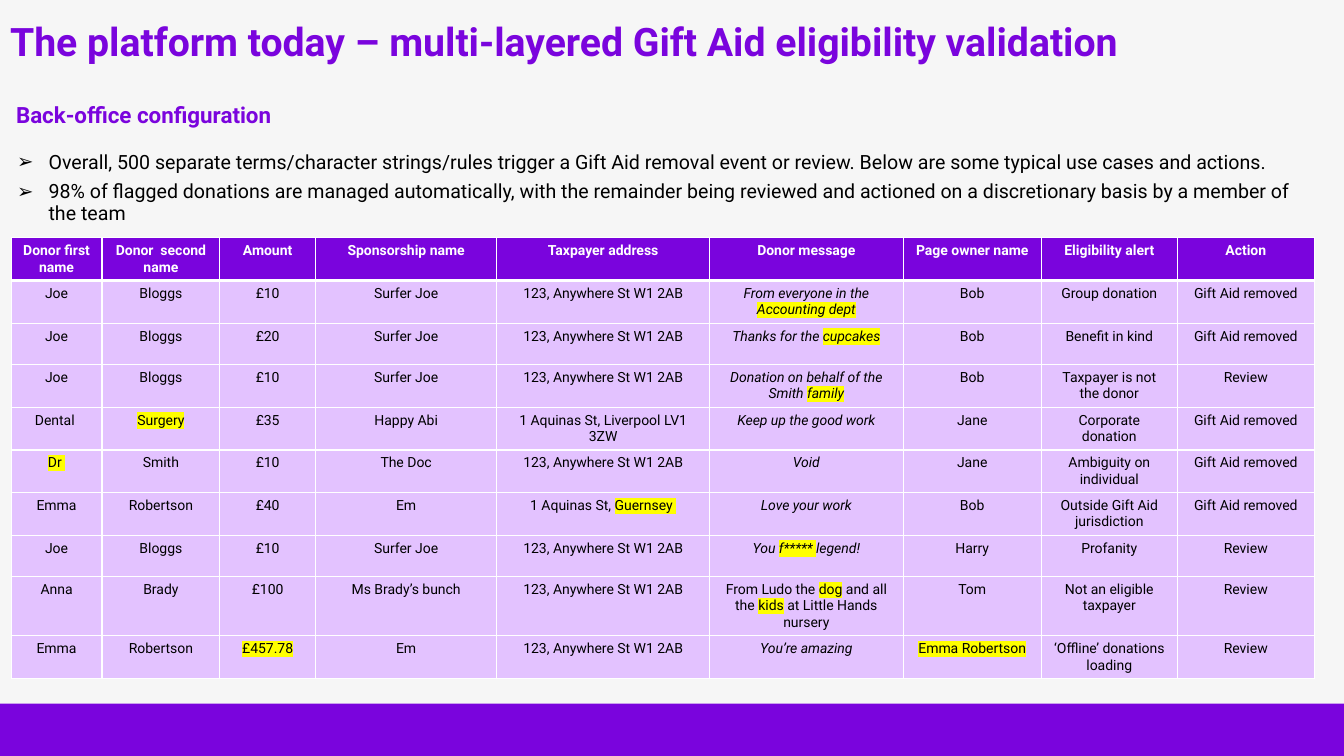
import lxml.etree
import pptx
import pptx.dml.color
import pptx.enum.shapes
import pptx.enum.text
import pptx.oxml.ns
import pptx.util
from pptx.util import Cm, Pt

COLOURS = {
    "purple": "7A04DD",
    "lilac": "E3C2FF",
    "page": "F6F6F6",
    "yellow": "FFFF00",
    "white": "FFFFFF",
    "black": "000000",
}
FONT = "Roboto"
CENTRE = pptx.enum.text.PP_ALIGN.CENTER
LEFT = pptx.enum.text.PP_ALIGN.LEFT

TITLE = "The platform today – multi-layered Gift Aid eligibility validation"
SUBTITLE = "Back-office configuration"
POINTS = [
    "Overall, 500 separate terms/character strings/rules trigger a Gift Aid removal event or review. "
    "Below are some typical use cases and actions.",
    "98% of flagged donations are managed automatically, with the remainder being reviewed and actioned "
    "on a discretionary basis by a member of the team",
]

COLUMN_WIDTHS = [2.29, 2.97, 2.41, 4.57, 5.36, 4.88, 3.48, 3.43, 3.45]
HEADINGS = ["Donor first name", "Donor  second name", "Amount", "Sponsorship name", "Taxpayer address",
            "Donor message", "Page owner name", "Eligibility alert", "Action"]
ADDRESS = "123, Anywhere St W1 2AB"
REMOVED = "Gift Aid removed"
# A leading underscore sets a cell in italics; text between bars is highlighted.
CASES = [
    ["Joe", "Bloggs", "£10", "Surfer Joe", ADDRESS, "_From everyone in the |Accounting dept|",
     "Bob", "Group donation", REMOVED],
    ["Joe", "Bloggs", "£20", "Surfer Joe", ADDRESS, "_Thanks for the |cupcakes|",
     "Bob", "Benefit in kind", REMOVED],
    ["Joe", "Bloggs", "£10", "Surfer Joe", ADDRESS, "_Donation on behalf of the Smith |family|",
     "Bob", "Taxpayer is not the donor", "Review"],
    ["Dental ", "|Surgery|", "£35", "Happy Abi", "1 Aquinas St, Liverpool LV1 3ZW", "_Keep up the good work",
     "Jane", "Corporate donation", REMOVED],
    ["|Dr |", "Smith", "£10", "The Doc", ADDRESS, "_Void",
     "Jane", "Ambiguity on individual", REMOVED],
    ["Emma", "Robertson", "£40", "Em", "1 Aquinas St, |Guernsey |", "_Love your work",
     "Bob", "Outside Gift Aid jurisdiction", REMOVED],
    ["Joe", "Bloggs", "£10", "Surfer Joe", ADDRESS, "_You |f***** |legend!",
     "Harry", "Profanity", "Review"],
    ["Anna", "Brady", "£100", "Ms Brady’s bunch", ADDRESS,
     "From Ludo the |dog| and all the |kids| at Little Hands nursery",
     "Tom", "Not an eligible taxpayer", "Review"],
    ["Emma", "Robertson", "|£457.78|", "Em", ADDRESS, "_You’re amazing",
     "|Emma Robertson|", "‘Offline’ donations loading", "Review"],
]


def rgb(name):
    return pptx.dml.color.RGBColor.from_string(COLOURS[name])


def paint(fill, colour):
    fill.solid()
    fill.fore_color.rgb = rgb(colour)


def set_all(target, values):
    for name, value in values.items():
        setattr(target, name, value)


def add_child(parent, tag, **attributes):
    child = lxml.etree.SubElement(parent, pptx.oxml.ns.qn(tag))
    for name, value in attributes.items():
        child.set(name, value)
    return child


def add_span(para, text, colour, size, bold=False, italic=False):
    span = para.add_run()
    span.text = text
    set_all(span.font, {"name": FONT, "size": Pt(size), "bold": bold, "italic": italic})
    span.font.color.rgb = rgb(colour)
    return span


def highlight(span):
    mark = lxml.etree.Element(pptx.oxml.ns.qn("a:highlight"))
    add_child(mark, "a:srgbClr", val=COLOURS["yellow"])
    span.font._element.find(pptx.oxml.ns.qn("a:solidFill")).addnext(mark)


def place_text(box, position, lines, text_format, para_format, indent=None, bullet=None):
    """Move a placeholder and fill it; indent is (left margin, first line) in cm."""
    set_all(box, dict(zip(("left", "top", "width", "height"), map(Cm, position))))
    frame = box.text_frame
    set_all(frame, {"word_wrap": True, "auto_size": pptx.enum.text.MSO_AUTO_SIZE.NONE})
    for index, line in enumerate(lines):
        para = frame.add_paragraph() if index else frame.paragraphs[0]
        if indent:
            properties = para._p.get_or_add_pPr()
            properties.set("marL", str(Cm(indent[0])))
            properties.set("indent", str(Cm(indent[1])))
            if bullet:
                add_child(properties, "a:buFont", typeface="Arial")
                add_child(properties, "a:buChar", char=bullet)
            else:
                add_child(properties, "a:buNone")
        set_all(para, para_format)
        add_span(para, line, **text_format)


def add_footer_bar(page):
    bar = page.shapes.add_shape(pptx.enum.shapes.MSO_SHAPE.RECTANGLE, 0, Cm(17.73), Cm(33.87), Cm(1.32))
    bar.shadow.inherit = False
    paint(bar.fill, "purple")
    bar.line.fill.background()


def set_borders(cell, top=1, bottom=1):
    properties = cell._tc.get_or_add_tcPr()
    sides = {"a:lnL": 1, "a:lnR": 1, "a:lnT": top, "a:lnB": bottom}
    for index, (tag, width) in enumerate(sides.items()):
        line = lxml.etree.Element(pptx.oxml.ns.qn(tag), w=str(Pt(width)))
        add_child(add_child(line, "a:solidFill"), "a:srgbClr", val=COLOURS["white"])
        properties.insert(index, line)


def fill_cell(cell, text, fill, colour, bold):
    paint(cell.fill, fill)
    para = cell.text_frame.paragraphs[0]
    para.alignment = CENTRE
    italic = text.startswith("_")
    for index, part in enumerate(text.lstrip("_").split("|")):
        if part:
            span = add_span(para, part, colour, 10, bold, italic)
            if index % 2:
                highlight(span)


def add_case_table(page):
    rows = [HEADINGS] + CASES
    table = page.shapes.add_table(len(rows), len(HEADINGS), Cm(0.28), Cm(5.99),
                                  Cm(sum(COLUMN_WIDTHS)), Cm(1.04 * len(rows))).table
    set_all(table, {"first_row": False, "horz_banding": False})
    for column, width in zip(table.columns, COLUMN_WIDTHS):
        column.width = Cm(width)
    for number, (row, texts) in enumerate(zip(table.rows, rows)):
        row.height = Cm(1.04)
        style = ("lilac", "black", False) if number else ("purple", "white", True)
        for cell, text in zip(row.cells, texts):
            fill_cell(cell, text, *style)
            set_borders(cell, top=3 if number == 1 else 1, bottom=1 if number else 3)


def main():
    deck = pptx.Presentation()
    set_all(deck, {"slide_width": Cm(33.87), "slide_height": Cm(19.05)})
    page = deck.slides.add_slide(deck.slide_layouts.get_by_name("Two Content"))
    paint(page.background.fill, "page")
    title, subtitle, points = page.placeholders

    list_format = {"alignment": LEFT, "line_spacing": 0.9, "space_before": Pt(0), "space_after": Pt(6)}
    place_text(title, (0, 0.3, 33.12, 1.45), [TITLE],
               {"colour": "purple", "size": 28, "bold": True}, {"alignment": LEFT})
    place_text(subtitle, (0, 2.51, 32.56, 0.95), [SUBTITLE],
               {"colour": "purple", "size": 16, "bold": True}, list_format, (0.15, 0))
    place_text(points, (0, 3.71, 33.12, 2.2), POINTS,
               {"colour": "black", "size": 14}, list_format, (0.97, -0.79), "➢")
    add_footer_bar(page)
    add_case_table(page)
    deck.save("out.pptx")


if __name__ == "__main__":
    main()
